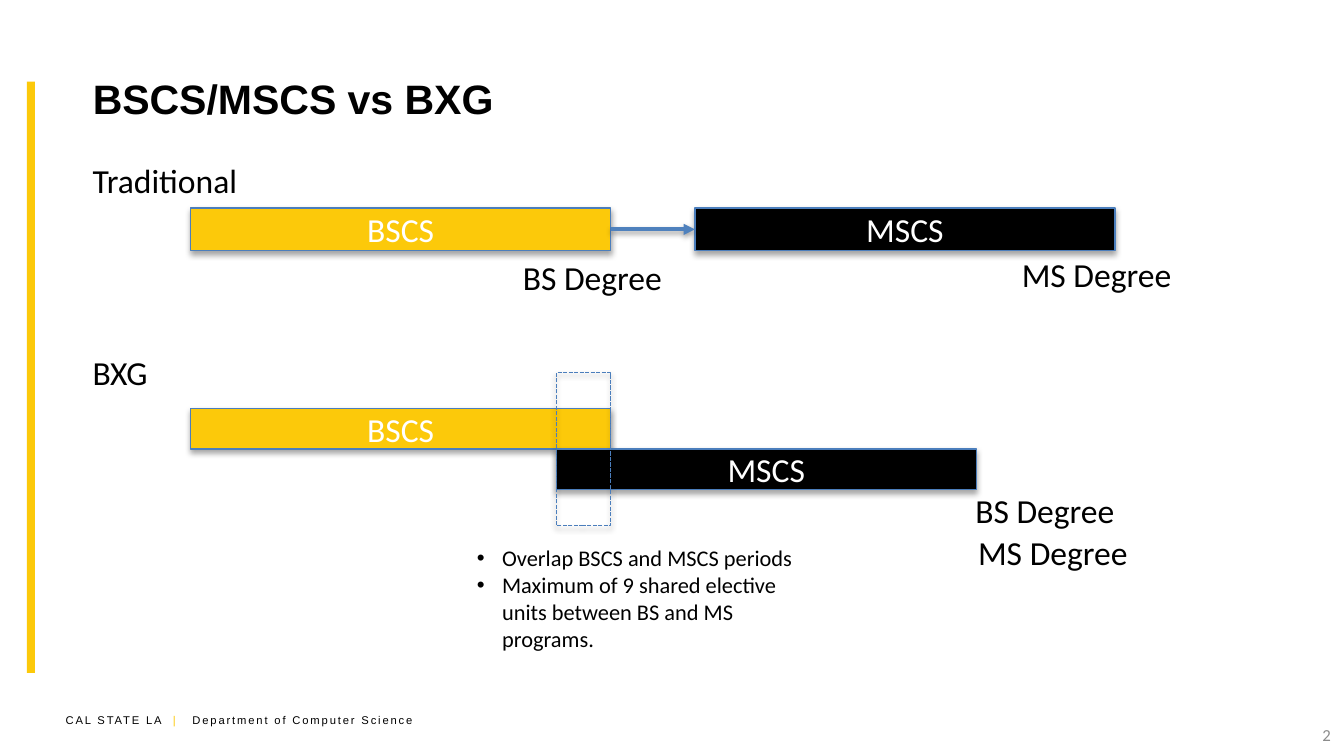
from pptx import Presentation
from pptx import util as u
from pptx.dml import color
from pptx.enum import dml, shapes, text
from pptx.oxml import ns
from lxml import etree

Pt = u.Pt
GOLD = color.RGBColor(0xFC, 0xC9, 0x0A)
BLACK = color.RGBColor(0x00, 0x00, 0x00)
WHITE = color.RGBColor(0xFF, 0xFF, 0xFF)
GRAY = color.RGBColor(0x8C, 0x8C, 0x8C)
OUTLINE = color.RGBColor(0x4B, 0x7E, 0xBC)
ARROW = color.RGBColor(0x4F, 0x81, 0xBD)


def write(paragraph, words, size=18, ink=BLACK, font="Calibri", bold=False,
          align=text.PP_ALIGN.LEFT, spacing=0):
    paragraph.alignment = align
    run = paragraph.add_run()
    run.text = words
    run.font.size = Pt(size)
    run.font.name = font
    run.font.bold = bold
    run.font.color.rgb = ink
    if spacing:
        run.font._element.set("spc", str(spacing * 100))


def cast_shadow(properties, opacity, distance):
    effects = properties.find(ns.qn("a:effectLst"))
    if effects is None:
        effects = etree.SubElement(properties, ns.qn("a:effectLst"))
    shadow = etree.SubElement(
        effects, ns.qn("a:outerShdw"), blurRad=str(Pt(3.1)),
        dist=str(Pt(distance)), dir="5400000", rotWithShape="0")
    tint = etree.SubElement(shadow, ns.qn("a:srgbClr"), val=str(BLACK))
    etree.SubElement(tint, ns.qn("a:alpha"), val=str(opacity * 1000))


deck = Presentation()
deck.slide_width, deck.slide_height = Pt(720), Pt(405)
slide = deck.slides.add_slide(deck.slide_layouts[5])

title = slide.shapes.title
title.left, title.top, title.width, title.height = Pt(42.5), Pt(18.7), Pt(641), Pt(67.7)
title.text_frame.auto_size = text.MSO_AUTO_SIZE.NONE
title.text_frame.vertical_anchor = text.MSO_ANCHOR.MIDDLE
write(title.text_frame.paragraphs[0], "BSCS/MSCS vs BXG", size=22, font="Arial", bold=True)

accent = slide.shapes.add_shape(
    shapes.MSO_SHAPE.RECTANGLE, Pt(14.4), Pt(43.8), Pt(4.3), Pt(316.8))
accent.shadow.inherit = False
accent.fill.solid()
accent.fill.fore_color.rgb = GOLD
accent.line.fill.background()

footer = slide.shapes.add_textbox(Pt(28.1), Pt(378.7), Pt(210), Pt(14.4))
footer.text_frame.word_wrap = True
for words, ink in [("CAL STATE LA ", BLACK), (" |   ", GOLD),
                   ("Department of Computer Science", BLACK)]:
    write(footer.text_frame.paragraphs[0], words, size=6, ink=ink, font="Arial", spacing=1)

page = slide.shapes.add_textbox(Pt(552.2), Pt(383), Pt(167.8), Pt(21.6))
page.text_frame.word_wrap = True
page.text_frame.vertical_anchor = text.MSO_ANCHOR.MIDDLE
write(page.text_frame.paragraphs[0], "2", size=9, ink=GRAY, align=text.PP_ALIGN.RIGHT)

bs_left, bar_width = 102.2, 225
bs_right = bs_left + bar_width
ms_left, overlap_left = 372.3, 298
row_top, row_height = 111.4, 23
bxg_top, bxg_height = 218.7, 21.8

for words, left, top, width, height, fill in [
    ("BSCS", bs_left, row_top, bar_width, row_height, GOLD),
    ("MSCS", ms_left, row_top, bar_width, row_height, BLACK),
    ("BSCS", bs_left, bxg_top, bar_width, bxg_height, GOLD),
    ("MSCS", overlap_left, bxg_top + bxg_height, bar_width, bxg_height, BLACK),
    ("", overlap_left, 199.6, bs_right - overlap_left, 82, None),
]:
    period = slide.shapes.add_shape(
        shapes.MSO_SHAPE.RECTANGLE, Pt(left), Pt(top), Pt(width), Pt(height))
    period.line.color.rgb = OUTLINE
    period.line.width = Pt(0.75)
    period.shadow.inherit = False
    cast_shadow(period._element.spPr, opacity=35, distance=1.8)
    if fill is None:
        period.fill.background()
        period.line.dash_style = dml.MSO_LINE.SQUARE_DOT
    else:
        period.fill.solid()
        period.fill.fore_color.rgb = fill
        period.text_frame.vertical_anchor = text.MSO_ANCHOR.MIDDLE
        write(period.text_frame.paragraphs[0], words, ink=WHITE, align=text.PP_ALIGN.CENTER)

arrow_y = row_top + row_height / 2
transition = slide.shapes.add_connector(
    shapes.MSO_CONNECTOR.STRAIGHT, Pt(bs_right), Pt(arrow_y), Pt(ms_left), Pt(arrow_y))
transition.line.color.rgb = ARROW
transition.line.width = Pt(2)
transition_properties = transition._element.spPr
etree.SubElement(transition_properties.find(ns.qn("a:ln")), ns.qn("a:tailEnd"), type="triangle")
cast_shadow(transition_properties, opacity=38, distance=1.6)

for words, left, top, width in [
    ("Traditional", 42.5, 82.1, 92.9),
    ("BS Degree", 273, 133.9, 90),
    ("MS Degree", 540.3, 132.7, 95.8),
    ("BXG", 42.5, 185.2, 44.6),
    ("BS Degree", 515.4, 258.9, 90),
    ("MS Degree", 516.9, 281.2, 95.8),
]:
    label = slide.shapes.add_textbox(Pt(left), Pt(top), Pt(width), Pt(29))
    label.text_frame.word_wrap = False
    write(label.text_frame.paragraphs[0], words)

notes = slide.shapes.add_textbox(Pt(248.4), Pt(288), Pt(200.2), Pt(65.5))
notes.text_frame.word_wrap = True
notes.text_frame.add_paragraph()
for paragraph, words in zip(notes.text_frame.paragraphs, [
    "Overlap BSCS and MSCS periods",
    "Maximum of 9 shared elective units between BS and MS programs.",
]):
    layout = paragraph._p.get_or_add_pPr()
    layout.set("marL", str(Pt(13.5)))
    layout.set("indent", str(-Pt(13.5)))
    etree.SubElement(layout, ns.qn("a:buFont"), typeface="Arial")
    etree.SubElement(layout, ns.qn("a:buChar"), char="•")
    write(paragraph, words, size=12)

deck.save("out.pptx")
